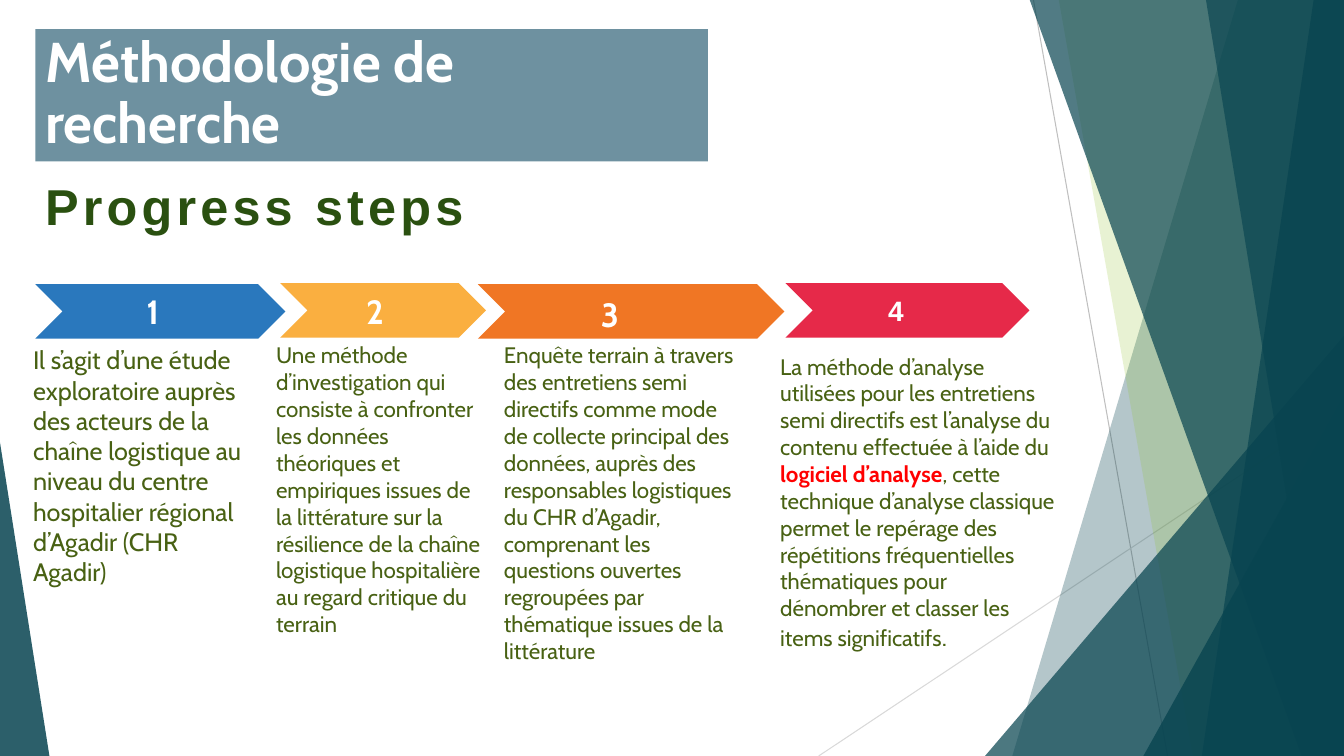
from lxml import etree
from pptx import Presentation
from pptx.dml.color import RGBColor
from pptx.enum import shapes, text
from pptx.oxml.ns import qn
from pptx.util import Inches, Pt

HUES = {
    "teal": "084450", "lime": "90C226", "band": "6E91A0", "white": "FFFFFF",
    "head": "2A5010", "body": "486113", "red": "FF0000",
    "blue": "2A78BD", "amber": "FAAF40", "orange": "F07624", "pink": "E62949",
    "gray": "BFBFBF", "pale": "D9D9D9",
}
TITLE = "Méthodologie de recherche"
HEAD = "Progress steps"

# Each step: arrow (left, top, width), hue, number box, number size and font,
# note box, runs of (words, size, hue, bold)
STEPS = [
    ((0.35, 2.82, 2.48), "blue", (1.21, 2.84, 0.61, 0.5), 24, "Cabin",
     (0.23, 3.37, 2.4, 2.83),
     [("Il s’agit d’une étude exploratoire auprès des acteurs de la chaîne "
       "logistique au niveau du centre hospitalier régional d’Agadir "
       "(CHR Agadir)", 18, "body", False)]),
    ((2.78, 2.81, 2.04), "amber", (3.45, 2.84, 0.54, 0.5), 24, "Cabin",
     (2.64, 3.34, 2.24, 3.33),
     [("Une méthode d’investigation qui consiste à confronter les données "
       "théoriques et empiriques issues de la littérature sur la résilience "
       "de la chaîne logistique hospitalière au regard critique du terrain",
       16, "body", False)]),
    ((4.74, 2.82, 3.04), "orange", (5.76, 2.87, 0.58, 0.5), 24, "Cabin",
     (4.9, 3.34, 2.56, 3.6),
     [("Enquête terrain à travers des entretiens semi directifs comme mode "
       "de collecte principal des données, auprès des responsables "
       "logistiques du CHR d’Agadir, comprenant les questions ouvertes "
       "regroupées par thématique issues de la littérature",
       16, "body", False)]),
    ((7.79, 2.81, 2.42), "pink", (8.71, 2.86, 0.53, 0.44), 20, "Arial",
     (7.64, 3.45, 2.93, 3.37),
     [("La méthode d’analyse utilisées pour les entretiens semi directifs "
       "est l’analyse du contenu effectuée à l’aide du ", 16, "body", False),
      ("logiciel d’analyse", 16, "red", True),
      (", cette technique d’analyse classique permet le repérage des "
       "répétitions fréquentielles thématiques pour dénombrer et classer "
       "les items significatifs", 16, "body", False),
      (".", 18, "body", False)]),
]

# Backdrop, from back to front
LINES = [((10.25, 0), (11.58, 7.5), "gray"), ((13.33, 4.03), (8.12, 7.5), "pale")]
WIDE, HIGH, TOP = 13.33, 7.5, -0.01
# A shard has top left x, bottom left x, hue, alpha; it runs to the right edge.
# A wedge has left, top, width, apex side, alpha; it stands on the bottom edge.
FACETS = [
    ("shard", 12.28, 10.04, "teal", 30),
    ("shard", 10.5, 11.83, "lime", 20),
    ("wedge", 9.77, 3.33, 3.56, 1, 72),
    ("shard", 10.21, 12.91, "teal", 70),
    ("shard", 13.03, 11.92, "teal", 70),
    ("shard", 11.96, 13.18, "teal", 65),
    ("wedge", 11.34, 3.93, 1.99, 1, 80),
    ("wedge", 0, 4.39, 0.49, 0, 85),
]

deck = Presentation()
deck.slide_width, deck.slide_height = Inches(WIDE), Inches(HIGH)
slide = deck.slides.add_slide(deck.slide_layouts[5])
parts = slide.shapes


def rgb(hue):
    return RGBColor.from_string(HUES[hue])


def paint(shape, hue, alpha=100):
    shape.shadow.inherit = False
    shape.fill.solid()
    shape.fill.fore_color.rgb = rgb(hue)
    shape.line.fill.background()
    if alpha < 100:
        tint = shape.fill._xPr.find(".//" + qn("a:srgbClr"))
        etree.SubElement(tint, qn("a:alpha")).set("val", str(alpha * 1000))


def write(para, words, size, hue, bold, font="Cabin"):
    run = para.add_run()
    run.text = words
    run.font.size, run.font.name, run.font.bold = Pt(size), font, bold
    run.font.color.rgb = rgb(hue)
    return run


def add_box(place, grow=True):
    frame = parts.add_textbox(*map(Inches, place)).text_frame
    frame.word_wrap = True
    if grow:
        frame.auto_size = text.MSO_AUTO_SIZE.SHAPE_TO_FIT_TEXT
    return frame


# Backdrop
for start, end, hue in LINES:
    line = parts.add_connector(shapes.MSO_CONNECTOR.STRAIGHT,
                               *map(Inches, start + end))
    line.line.color.rgb, line.line.width = rgb(hue), Pt(0.75)
    etree.SubElement(line._element.spPr, qn("a:effectLst"))

for kind, *spec in FACETS:
    if kind == "shard":
        upper, lower, hue, alpha = spec
        pen = parts.build_freeform(Inches(upper), Inches(TOP))
        edge = [(WIDE, TOP), (WIDE, HIGH), (lower, HIGH)]
        pen.add_line_segments([(Inches(x), Inches(y)) for x, y in edge])
        facet = pen.convert_to_shape()
    else:
        left, top, width, apex, alpha = spec
        hue = "teal"
        facet = parts.add_shape(
            shapes.MSO_SHAPE.ISOSCELES_TRIANGLE,
            *map(Inches, (left, top, width, HIGH - top)))
        facet.adjustments[0] = apex
    paint(facet, hue, alpha)

# Title band
title = parts.title
title.left, title.top, title.width, title.height = map(
    Inches, (0.35, 0.29, 6.67, 1.31))
title.fill.solid()
title.fill.fore_color.rgb = rgb("band")
frame = title.text_frame
frame.word_wrap = True
frame.auto_size = text.MSO_AUTO_SIZE.SHAPE_TO_FIT_TEXT
frame.vertical_anchor = text.MSO_ANCHOR.TOP
para = frame.paragraphs[0]
para.alignment = text.PP_ALIGN.LEFT
para.line_spacing, para.space_before = 0.9, Pt(10)
write(para, TITLE, 40, "white", True)

# Heading
frame = add_box((0.35, 1.77, 5.54, 0.54), grow=False)
frame.vertical_anchor = text.MSO_ANCHOR.MIDDLE
run = write(frame.paragraphs[0], HEAD, 36, "head", True, "Arial")
run.font._element.set("spc", "300")

# Steps
for number, (arrow, hue, spot, size, font, place, runs) in enumerate(STEPS, 1):
    chevron = parts.add_shape(shapes.MSO_SHAPE.CHEVRON,
                              *map(Inches, arrow + (0.54,)))
    paint(chevron, hue)
    para = add_box(spot).paragraphs[0]
    if font == "Cabin":
        para.alignment = text.PP_ALIGN.CENTER
    write(para, str(number), size, "white", True, font)
    para = add_box(place).paragraphs[0]
    for piece in runs:
        write(para, *piece)

deck.save("out.pptx")
